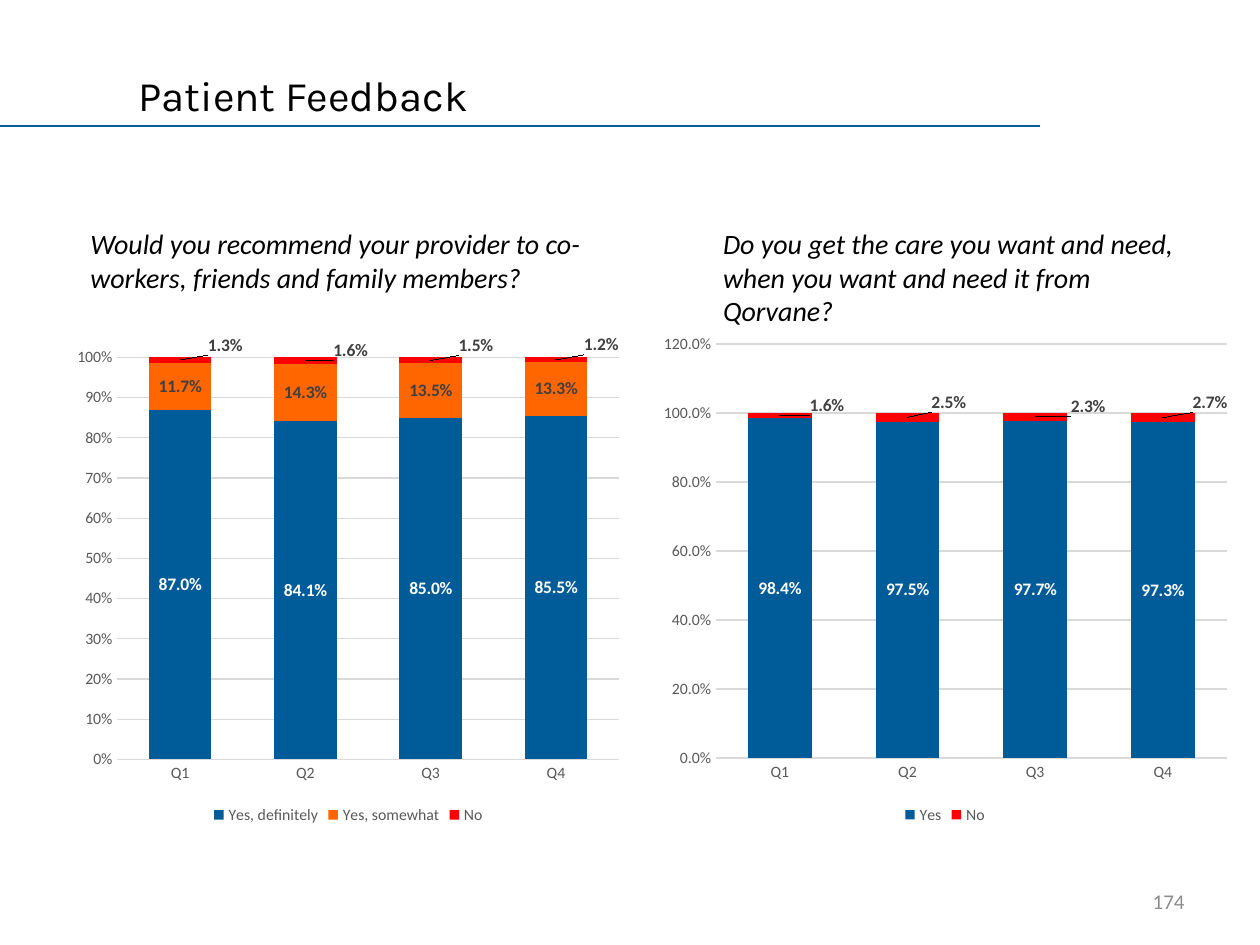
import pptx
import pptx.util
import pptx.chart.data
import pptx.dml.color
import pptx.enum.chart
import pptx.enum.shapes
import pptx.enum.text
import pptx.oxml
import pptx.oxml.ns

INK, BLUE, RED, GREY, RULE = "000000", "005B99", "FF0000", "595959", "D9D9D9"
WIDE, HIGH = 10, 7.5
MID, TOP = pptx.enum.text.MSO_ANCHOR.MIDDLE, pptx.enum.text.MSO_ANCHOR.TOP
LEFT, RIGHT = pptx.enum.text.PP_ALIGN.LEFT, pptx.enum.text.PP_ALIGN.RIGHT
KIND = pptx.enum.chart.XL_CHART_TYPE

TEXTS = [
    ("Patient Feedback", (1, 0.5, 3.79, 0.5), MID, LEFT,
     {"name": "Karla", "size": 24, "color": INK}),
    ("Would you recommend your provider to co-workers, friends and family members?",
     (0.62, 1.75, 4.24, 0.64), TOP, LEFT, {"size": 16, "color": INK, "italic": True}),
    ("Do you get the care you want and need, when you want and need it from Qorvane?",
     (5.64, 1.75, 3.88, 1.18), TOP, LEFT, {"size": 16, "color": INK, "italic": True}),
    ("174", (8.92, 6.95, 0.58, 0.4), MID, RIGHT, {"size": 12, "color": "8C8C8C"}),
]

CATS = ["Q1", "Q2", "Q3", "Q4"]
CHARTS = [
    {"kind": KIND.COLUMN_STACKED, "box": (5.17, 2.57, 4.66, 4.01),
     "plot": (0.11, 0.04, 0.87, 0.82), "top": 1.2, "step": 0.2, "form": "0.0%",
     "rows": [("Yes", BLUE, "FFFFFF", (0.984, 0.975, 0.977, 0.973)),
              ("No", RED, "404040", (0.016, 0.025, 0.023, 0.027))],
     "moves": [(0.08, -0.02), (0.07, -0.03), (0.09, -0.02), (0.08, -0.03)]},
    {"kind": KIND.COLUMN_STACKED_100, "box": (0.53, 2.64, 4.47, 3.94),
     "plot": (0.09, 0.05, 0.89, 0.81), "top": 1, "step": 0.1, "form": "0%",
     "rows": [("Yes, definitely", BLUE, "FFFFFF", (0.87, 0.841, 0.85, 0.855)),
              ("Yes, somewhat", "FF6600", "404040", (0.117, 0.143, 0.135, 0.133)),
              ("No", RED, "404040", (0.013, 0.016, 0.015, 0.012))],
     "moves": [(0.08, -0.03), (0.08, -0.02), (0.08, -0.03), (0.08, -0.03)]},
]


def tint(color, code):
    color.rgb = pptx.dml.color.RGBColor.from_string(code)


def style(font, form):
    for key, val in {"name": "Calibri", **form}.items():
        if key == "color":
            tint(font.color, val)
        else:
            setattr(font, key, pptx.util.Pt(val) if key == "size" else val)


def paint(fill, code):
    fill.solid()
    tint(fill.fore_color, code)


def stroke(line, code):
    tint(line.color, code)
    line.width = pptx.util.Pt(0.75)


def place(box):
    return [pptx.util.Inches(part) for part in box]


def layout(head, tags):
    body = "".join(f'<c:{tag} val="{val}"/>' for tag, val in tags)
    return pptx.oxml.parse_xml(
        f'<c:layout {pptx.oxml.ns.nsdecls("c")}><c:manualLayout>{head}{body}'
        '</c:manualLayout></c:layout>')


def write(slide, text, box, anchor, align, form):
    frame = slide.shapes.add_textbox(*place(box)).text_frame
    frame.word_wrap = True
    frame.vertical_anchor = anchor
    para = frame.paragraphs[0]
    para.alignment = align
    run = para.add_run()
    run.text = text
    style(run.font, form)


def axes(chart, item):
    cat, val = chart.category_axis, chart.value_axis
    for axis in (cat, val):
        axis.major_tick_mark = pptx.enum.chart.XL_TICK_MARK.NONE
        style(axis.tick_labels.font, {"size": 9, "color": GREY})
    stroke(cat.format.line, RULE)
    val.format.line.fill.background()
    stroke(val.major_gridlines.format.line, RULE)
    for key, num in {"minimum_scale": 0, "maximum_scale": item["top"],
                     "major_unit": item["step"]}.items():
        setattr(val, key, num)
    val.tick_labels.number_format = item["form"]
    val.tick_labels.number_format_is_linked = False


def draw(slide, item):
    data = pptx.chart.data.CategoryChartData(number_format="0.0%")
    data.categories = CATS
    for name, _, _, vals in item["rows"]:
        data.add_series(name, vals)
    chart = slide.shapes.add_chart(item["kind"], *place(item["box"]), data).chart
    style(chart.font, {"size": 10, "color": INK})
    chart.has_title = False
    chart.has_legend = True
    chart.legend.position = pptx.enum.chart.XL_LEGEND_POSITION.BOTTOM
    chart.legend.include_in_layout = False
    style(chart.legend.font, {"size": 9, "color": GREY})
    axes(chart, item)

    plot = chart.plots[0]
    for key, val in {"gap_width": 100, "overlap": 100, "vary_by_categories": False}.items():
        setattr(plot, key, val)
    for row, (_, code, ink, _) in zip(plot.series, item["rows"]):
        paint(row.format.fill, code)
        form = {"size": 10, "bold": True, "color": ink}
        marks = row.data_labels
        for key, val in {"show_value": True, "number_format": "0.0%",
                         "number_format_is_linked": False}.items():
            setattr(marks, key, val)
        style(marks.font, form)
    for pos in range(len(CATS)):
        style(row.points[pos].data_label.font, form)
    for mark, move in zip(chart.element.xpath(".//c:dLbl"), item["moves"]):
        mark.insert(1, layout("", zip("xy", move)))

    area = chart.element.xpath(".//c:plotArea")[0]
    for old in area.xpath("./c:layout"):
        area.remove(old)
    head = '<c:layoutTarget val="inner"/><c:xMode val="edge"/><c:yMode val="edge"/>'
    area.insert(0, layout(head, zip("xywh", item["plot"])))


def main():
    deck = pptx.Presentation()
    deck.slide_width, deck.slide_height = place((WIDE, HIGH))
    slide = deck.slides.add_slide(deck.slide_layouts[6])
    rule = slide.shapes.add_connector(
        pptx.enum.shapes.MSO_CONNECTOR.STRAIGHT, *place((0, 1, 8.25, 1)))
    stroke(rule.line, BLUE)
    rule.element.spPr.append(
        pptx.oxml.parse_xml(f'<a:effectLst {pptx.oxml.ns.nsdecls("a")}/>'))
    for item in CHARTS:
        draw(slide, item)
    for item in TEXTS:
        write(slide, *item)
    deck.save("out.pptx")


if __name__ == "__main__":
    main()
